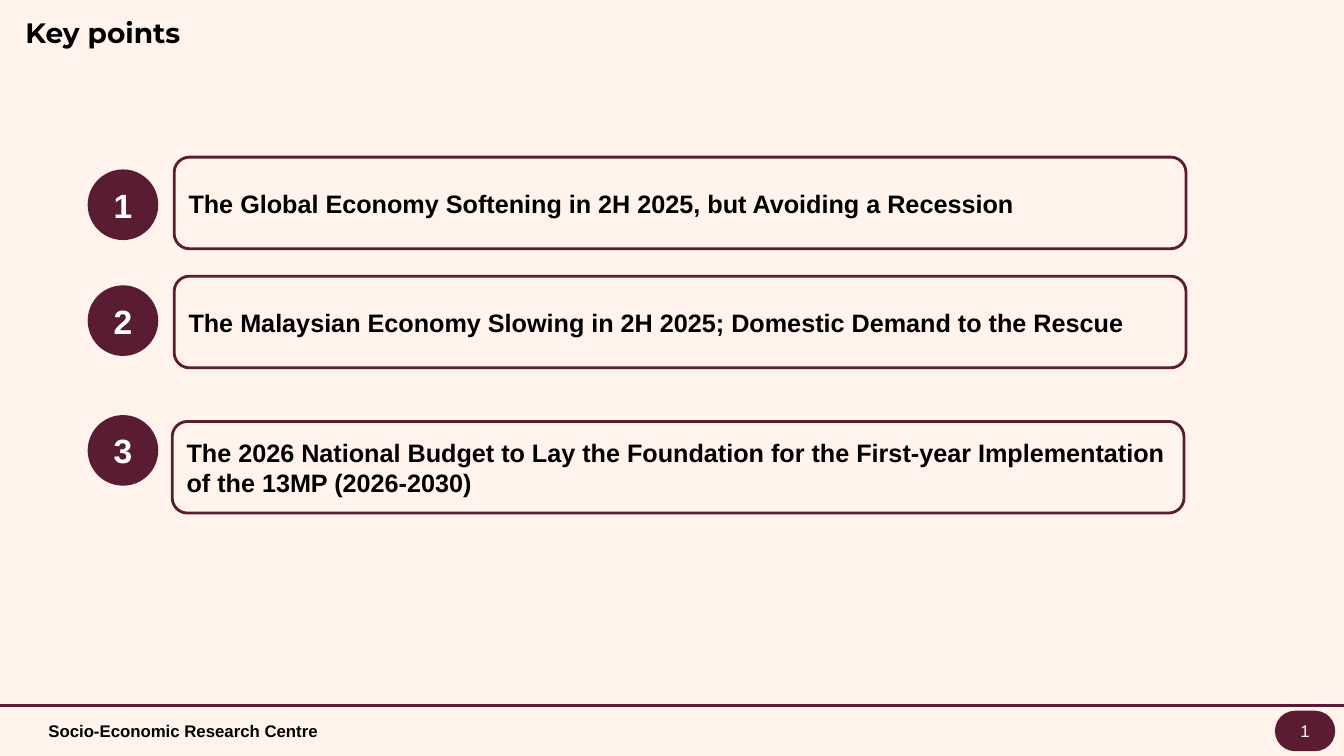
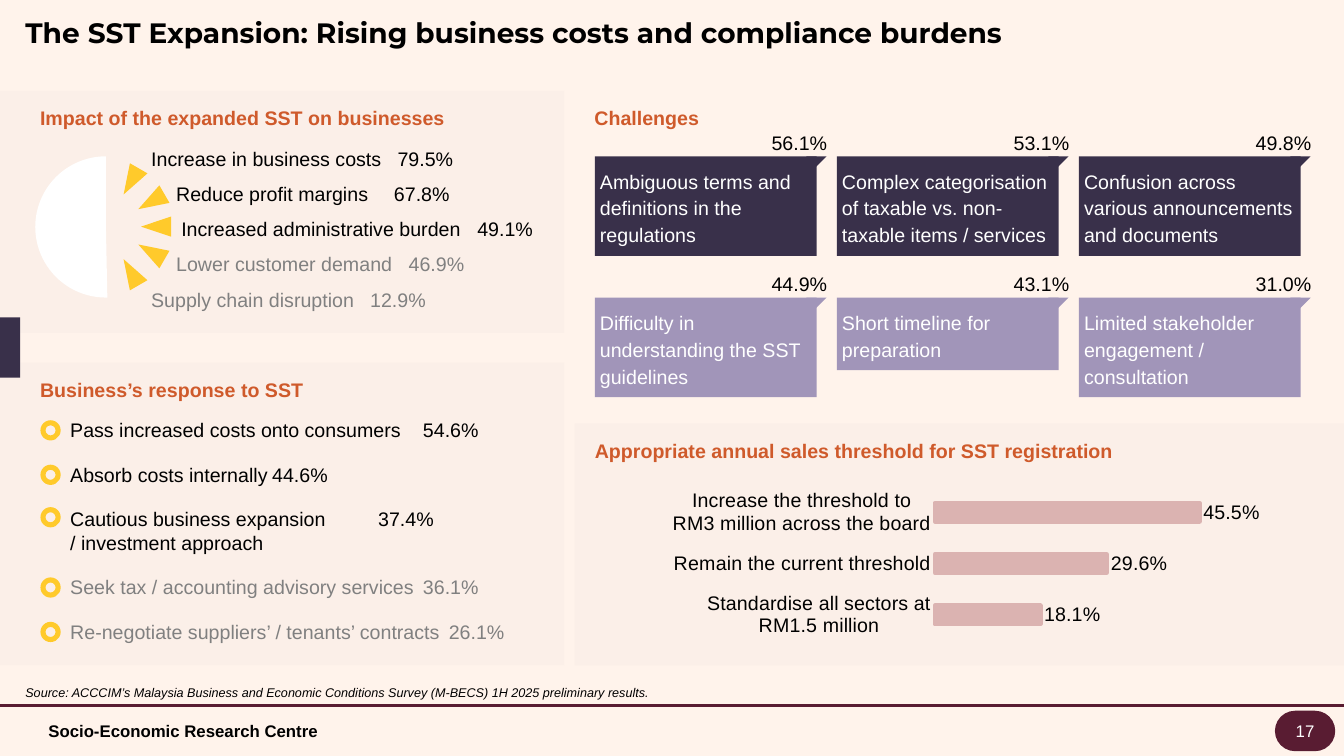
from dataclasses import dataclass

from lxml import etree
from pptx import Presentation
from pptx.chart.data import CategoryChartData
from pptx.dml.color import RGBColor
from pptx.enum.chart import XL_CHART_TYPE, XL_LABEL_POSITION, XL_TICK_MARK
from pptx.enum.shapes import MSO_CONNECTOR, MSO_SHAPE
from pptx.enum.text import MSO_ANCHOR, MSO_AUTO_SIZE, PP_ALIGN
from pptx.oxml.ns import qn
from pptx.util import Cm, Pt

RECT, ROUND, OVAL = MSO_SHAPE.RECTANGLE, MSO_SHAPE.ROUNDED_RECTANGLE, MSO_SHAPE.OVAL
PIE, DONUT = MSO_SHAPE.PIE, MSO_SHAPE.DONUT
TRIANGLE, CORNER = MSO_SHAPE.ISOSCELES_TRIANGLE, MSO_SHAPE.RIGHT_TRIANGLE
LEFT, CENTER, RIGHT = PP_ALIGN.LEFT, PP_ALIGN.CENTER, PP_ALIGN.RIGHT
TOP, MIDDLE, BOTTOM = MSO_ANCHOR.TOP, MSO_ANCHOR.MIDDLE, MSO_ANCHOR.BOTTOM
TITLE_ONLY = 5
WIDTH, HEIGHT = 33.87, 19.05


@dataclass(frozen=True)
class Theme:
    paper: str = "FFF3EB"
    panel: str = "FBEFE8"
    wine: str = "591C32"
    navy: str = "39304A"
    lilac: str = "A195B9"
    yellow: str = "FFCA2B"
    rust: str = "CF5A2B"
    rose: str = "DBB3B1"
    black: str = "000000"
    grey: str = "808080"
    white: str = "FFFFFF"
    body_font: str = "Arial"
    title_font: str = "Montserrat"
    title: int = 20
    number: int = 24
    point: int = 18
    body: int = 14
    footer: int = 12
    source: int = 9


T = Theme()


@dataclass(frozen=True)
class Box:
    """Left, top, width and height in centimetres."""
    x: float
    y: float
    w: float
    h: float

    def emu(self) -> tuple:
        return Cm(self.x), Cm(self.y), Cm(self.w), Cm(self.h)


@dataclass(frozen=True)
class Style:
    size: int = T.body
    color: str = T.black
    bold: bool = False
    italic: bool = False
    font: str = T.body_font
    align: PP_ALIGN = LEFT
    anchor: MSO_ANCHOR = TOP
    insets: tuple = (0.25, 0.13, 0.25, 0.13)
    spacing: float = 1.0


@dataclass(frozen=True)
class KeyPoint:
    circle_y: float
    box_x: float
    box_y: float
    text: str


@dataclass(frozen=True)
class Impact:
    ray_x: float
    ray_y: float
    x: float
    tab: float
    text: str
    color: str = T.black


@dataclass(frozen=True)
class Response:
    tab: float
    text: str
    color: str = T.black


@dataclass(frozen=True)
class Challenge:
    share: str
    text: str
    h: float = 2.51


HEADING = Style(color=T.rust, bold=True)

KEY_POINTS = [
    KeyPoint(4.27, 4.39, 3.96, "The Global Economy Softening in 2H 2025, but Avoiding a Recession"),
    KeyPoint(7.19, 4.39, 6.96, "The Malaysian Economy Slowing in 2H 2025; Domestic Demand to the Rescue"),
    KeyPoint(10.46, 4.34, 10.62, "The 2026 National Budget to Lay the Foundation for the First-year "
                                 "Implementation of the 13MP (2026-2030)"),
]
IMPACTS = [
    Impact(3.05, 4.19, 3.56, 6.21, "Increase in business costs\t79.5%"),
    Impact(3.56, 4.70, 4.19, 5.49, "Reduce profit margins\t67.8%"),
    Impact(3.68, 5.33, 4.32, 7.46, "Increased administrative burden\t49.1%"),
    Impact(3.56, 5.97, 4.19, 5.86, "Lower customer demand\t46.9%", T.grey),
    Impact(3.05, 6.48, 3.56, 5.52, "Supply chain disruption\t12.9%", T.grey),
]
RESPONSES = [
    Response(8.89, "Pass increased costs onto consumers\t54.6%"),
    Response(5.09, "Absorb costs internally\t44.6%"),
    Response(7.76, "Cautious business expansion\t37.4%\n/ investment approach"),
    Response(8.89, "Seek tax / accounting advisory services\t36.1%", T.grey),
    Response(9.54, "Re-negotiate suppliers’ / tenants’ contracts\t26.1%", T.grey),
]
CHALLENGES = [
    Challenge("56.1%", "Ambiguous terms and definitions in the regulations"),
    Challenge("53.1%", "Complex categorisation of taxable vs. non-taxable items / services"),
    Challenge("49.8%", "Confusion across various announcements and documents"),
    Challenge("44.9%", "Difficulty in understanding the SST guidelines"),
    Challenge("43.1%", "Short timeline for preparation", 1.83),
    Challenge("31.0%", "Limited stakeholder engagement / consultation"),
]
THRESHOLDS = {
    "Standardise all sectors at\nRM1.5 million": 0.181,
    "Remain the current threshold": 0.296,
    "Increase the threshold to\nRM3 million across the board": 0.455,
}


def rgb(color: str) -> RGBColor:
    return RGBColor.from_string(color)


def write(sp, text: str, st: Style, tab: float = 0) -> None:
    tf = sp.text_frame
    tf.word_wrap = True
    tf.auto_size = MSO_AUTO_SIZE.NONE
    tf.vertical_anchor = st.anchor
    tf.margin_left, tf.margin_top, tf.margin_right, tf.margin_bottom = map(Cm, st.insets)
    for i, line in enumerate(text.split("\n")):
        p = tf.add_paragraph() if i else tf.paragraphs[0]
        p.alignment = st.align
        p.line_spacing = st.spacing
        if "\t" in line:
            tabs = etree.SubElement(p._p.get_or_add_pPr(), qn("a:tabLst"))
            etree.SubElement(tabs, qn("a:tab"), pos=str(Cm(tab)), algn="l")
        r = p.add_run()
        r.text = line
        f = r.font
        f.name, f.size, f.bold, f.italic = st.font, Pt(st.size), st.bold, st.italic
        f.color.rgb = rgb(st.color)


def add_text(s, box: Box, text: str, st: Style, tab: float = 0) -> None:
    write(s.shapes.add_textbox(*box.emu()), text, st, tab)


def add_shape(s, kind: MSO_SHAPE, box: Box, fill: str = "", line: str = "", rotation: float = 0):
    sp = s.shapes.add_shape(kind, *box.emu())
    sp.shadow.inherit = False
    sp.rotation = rotation
    if fill:
        sp.fill.solid()
        sp.fill.fore_color.rgb = rgb(fill)
    else:
        sp.fill.background()
    if line:
        sp.line.color.rgb = rgb(line)
        sp.line.width = Pt(2)
    else:
        sp.line.fill.background()
    return sp


def add_slide(prs, title: str, number: str):
    """Title, footer rule, footer text and page number."""
    s = prs.slides.add_slide(prs.slide_layouts[TITLE_ONLY])
    rule = s.shapes.add_connector(MSO_CONNECTOR.STRAIGHT, 0, Cm(17.78), Cm(WIDTH), Cm(17.78))
    rule.line.color.rgb = rgb(T.wine)
    rule.line.width = Pt(2.25)
    etree.SubElement(rule._element.spPr, qn("a:effectLst"))
    add_text(s, Box(1.02, 18.06, 7.62, 0.71), "Socio-Economic Research Centre",
             Style(T.footer, bold=True, anchor=MIDDLE, insets=(0.2, 0.1, 0.2, 0.1)))
    pill = add_shape(s, ROUND, Box(32.13, 17.91, 1.52, 1.02), T.wine)
    pill.adjustments[0] = 0.5
    write(pill, number, Style(T.footer, T.white, align=CENTER, anchor=MIDDLE, insets=(0, 0, 0, 0)))
    head = s.shapes.title
    head.left, head.top, head.width, head.height = Box(0.51, 0, 32.51, 1.27).emu()
    write(head, title, Style(T.title, bold=True, font=T.title_font, insets=(0.13, 0.38, 0.13, 0.13)))
    return s


def add_panel(s, box: Box, heading: str) -> None:
    add_shape(s, RECT, box, T.panel)
    add_heading(s, max(box.x, 0.5) + 0.26, box.y + 0.25, heading)


def add_heading(s, x: float, y: float, text: str) -> None:
    add_text(s, Box(x, y, 14, 0.86), text, HEADING)


def add_impacts(s) -> None:
    add_panel(s, Box(0, 2.29, 14.22, 6.1), "Impact of the expanded SST on businesses")
    sun = add_shape(s, PIE, Box(0.89, 3.94, 3.56, 3.56), T.white)
    sun.adjustments[0], sun.adjustments[1] = 53.29, 162
    for i, item in enumerate(IMPACTS):
        add_shape(s, TRIANGLE, Box(item.ray_x, item.ray_y, 0.51, 0.76), T.yellow, rotation=210 + 30 * i)
        add_text(s, Box(item.x, 3.56 + 0.89 * i, 9.8, 0.86), item.text, Style(color=item.color), item.tab)


def add_responses(s) -> None:
    add_panel(s, Box(0, 9.14, 14.22, 7.62), "Business’s response to SST")
    y = 10.41
    for item in RESPONSES:
        extra = 0.6 * item.text.count("\n")
        add_text(s, Box(1.52, y, 12.4, 0.86 + extra), item.text, Style(color=item.color), item.tab)
        add_shape(s, DONUT, Box(1.02, y + (0.13 if extra else 0.18), 0.51, 0.51), T.yellow)
        y += 1.12 + extra


def add_challenges(s) -> None:
    add_heading(s, 14.73, 2.54, "Challenges")
    for i, item in enumerate(CHALLENGES):
        row, col = divmod(i, 3)
        x, y = 14.99 + 6.1 * col, 3.94 + 3.56 * row
        fill = T.lilac if row else T.navy
        card = add_shape(s, RECT, Box(x, y, 5.59, item.h), fill)
        write(card, item.text, Style(color=T.white, insets=(0.13, 0.25, 0.13, 0.25), spacing=1.14))
        add_shape(s, CORNER, Box(x + 5.33, y, 0.51, 0.51), fill, rotation=90)
        add_text(s, Box(x + 4.06, y - 0.64, 1.8, 0.61), item.share, Style(align=RIGHT, insets=(0, 0, 0, 0)))


def add_threshold_chart(s) -> None:
    add_panel(s, Box(14.48, 10.67, 19.39, 6.1), "Appropriate annual sales threshold for SST registration")
    data = CategoryChartData(number_format="0.0%")
    data.categories = list(THRESHOLDS)
    data.add_series("Series 1", list(THRESHOLDS.values()))
    frame = s.shapes.add_chart(XL_CHART_TYPE.BAR_CLUSTERED, *Box(14.99, 11.94, 17.86, 4.57).emu(), data)
    chart = frame.chart
    chart.has_legend = chart.has_title = False

    # Axes
    val, cat = chart.value_axis, chart.category_axis
    val.minimum_scale, val.maximum_scale = 0, 0.5
    val.has_major_gridlines = val.visible = False
    cat.major_tick_mark = XL_TICK_MARK.NONE
    cat.format.line.fill.background()

    # Bars and labels
    plot = chart.plots[0]
    plot.gap_width, plot.vary_by_categories = 182, False
    fmt = plot.series[0].format
    fmt.fill.solid()
    fmt.fill.fore_color.rgb = fmt.line.color.rgb = rgb(T.rose)
    fmt.line.width = Pt(3.5)
    plot.has_data_labels = True
    labels = plot.data_labels
    labels.show_value = True
    labels.position = XL_LABEL_POSITION.OUTSIDE_END
    labels.number_format, labels.number_format_is_linked = "0.0%", False
    for f in (chart.font, cat.tick_labels.font, labels.font):
        f.name, f.size, f.color.rgb = T.body_font, Pt(T.body), rgb(T.black)

    # Fixed inner plot area
    area = chart._chartSpace.find(".//" + qn("c:plotArea"))
    for old in area.findall(qn("c:layout")):
        area.remove(old)
    layout = etree.Element(qn("c:layout"))
    manual = etree.SubElement(layout, qn("c:manualLayout"))
    for tag, value in (("layoutTarget", "inner"), ("xMode", "edge"), ("yMode", "edge"),
                       ("x", "0.48"), ("y", "0.07"), ("w", "0.41"), ("h", "0.85")):
        etree.SubElement(manual, qn("c:" + tag), val=value)
    area.insert(0, layout)


def main() -> None:
    prs = Presentation()
    prs.slide_width, prs.slide_height = Cm(WIDTH), Cm(HEIGHT)
    paper = prs.slide_master.background.fill
    paper.solid()
    paper.fore_color.rgb = rgb(T.paper)

    # Key points
    s = add_slide(prs, "Key points", "1")
    for n, point in enumerate(KEY_POINTS, 1):
        circle = add_shape(s, OVAL, Box(2.21, point.circle_y, 1.78, 1.78), T.wine)
        write(circle, str(n), Style(T.number, T.white, bold=True, align=CENTER, anchor=MIDDLE))
        frame = add_shape(s, ROUND, Box(point.box_x, point.box_y, 25.5, 2.31), line=T.wine)
        write(frame, point.text, Style(T.point, bold=True, anchor=MIDDLE))

    # SST survey
    s = add_slide(prs, "The SST Expansion: Rising business costs and compliance burdens", "17")
    add_impacts(s)
    add_responses(s)
    add_shape(s, RECT, Box(0, 8, 0.51, 1.52), T.navy)
    add_threshold_chart(s)
    add_text(s, Box(0.51, 17.27, 20, 0.38),
             "Source: ACCCIM’s Malaysia Business and Economic Conditions Survey (M-BECS) 1H 2025 preliminary results.",
             Style(T.source, italic=True, anchor=BOTTOM, insets=(0.13, 0, 0.13, 0)))
    add_challenges(s)

    prs.save("out.pptx")


if __name__ == "__main__":
    main()
